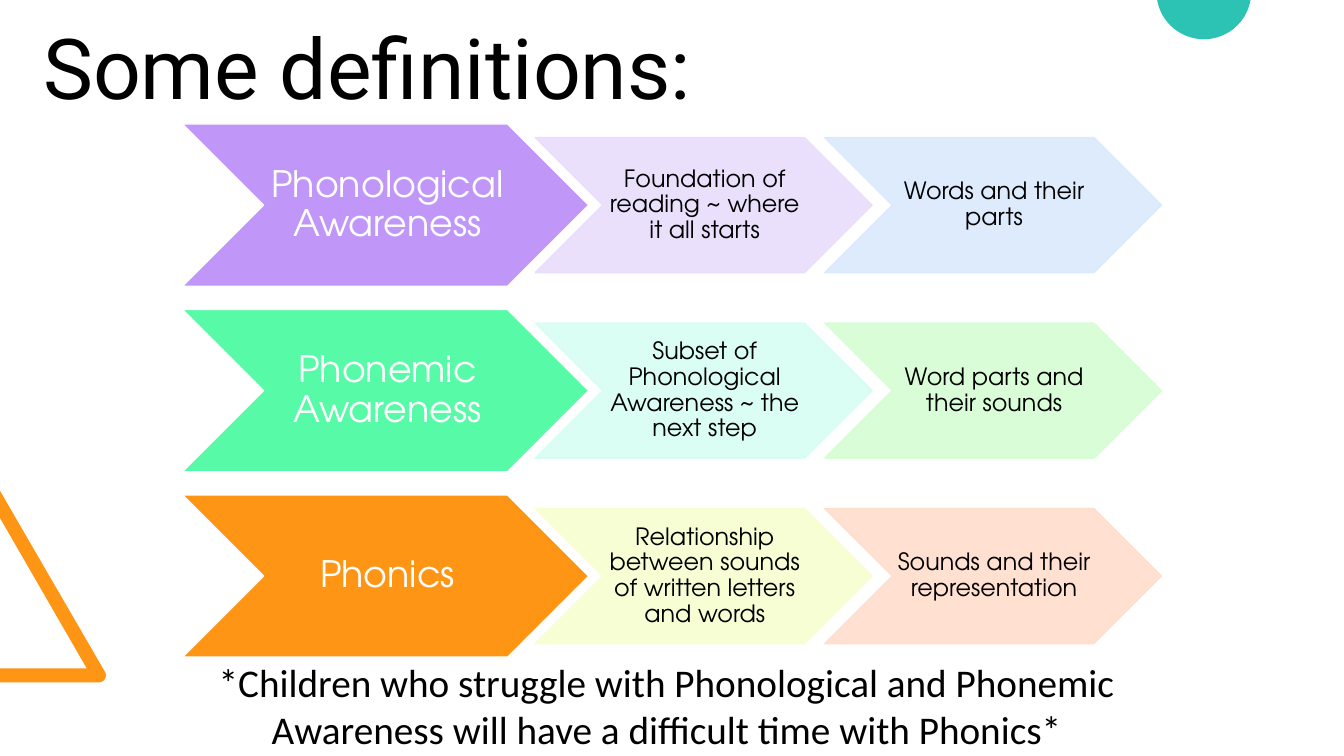
from dataclasses import dataclass
from math import cos, radians, sin

from lxml import etree
from pptx import Presentation
from pptx.dml.color import RGBColor
from pptx.enum.shapes import MSO_SHAPE
from pptx.enum.text import MSO_ANCHOR, PP_ALIGN
from pptx.oxml.ns import qn
from pptx.util import Inches, Pt

CHEVRON = MSO_SHAPE.CHEVRON
MIDDLE = MSO_ANCHOR.MIDDLE
LEFT, CENTER = PP_ALIGN.LEFT, PP_ALIGN.CENTER


@dataclass(frozen=True)
class Theme:
    black: str = "000000"
    white: str = "FFFFFF"
    orange: str = "FF9514"
    teal: str = "2CC3B4"
    title_font: str = "Roboto"
    note_font: str = "Calibri"
    step_font: str = "TeX Gyre Adventor"
    title_size: int = 60
    note_size: int = 28
    term_size: int = 26
    side_size: int = 17


THEME = Theme()

# Each row: the term, then its details, all as (text, fill).
ROWS = [
    [("Phonological Awareness", "C097F8"),
     ("Foundation of reading ~ where it all starts", "E8DDFC"),
     ("Words and their parts", "DAE9FD")],
    [("Phonemic Awareness", "57FAA6"),
     ("Subset of Phonological Awareness ~ the next step", "D6FDF3"),
     ("Word parts and their sounds", "D5FED3")],
    [("Phonics", THEME.orange),
     ("Relationship between sounds of written letters and words", "F8FECF"),
     ("Sounds and their representation", "FFDDCC")],
]
ROW_TOP, ROW_STEP = 1.23, 1.84
TERM_LEFT, TERM_W, TERM_H = 1.81, 4.03, 1.61
SIDE_LEFT, SIDE_STEP, SIDE_W, SIDE_H = 5.31, 2.87, 3.34, 1.34


def paint(fill, color, alpha=100):
    """Fill with a solid colour at the given percentage of opacity."""
    fill.solid()
    fill.fore_color.rgb = RGBColor.from_string(color)
    if alpha < 100:
        for tint in fill._xPr.iter(qn("a:srgbClr")):
            etree.SubElement(tint, qn("a:alpha"), val=str(alpha * 1000))


def write(frame, text, font, size, color, align):
    frame.word_wrap = True
    para = frame.paragraphs[0]
    para.text = text
    para.alignment = align
    para.font.name = font
    para.font.size = Pt(size)
    para.font.color.rgb = RGBColor.from_string(color)
    return para


def add_text(slide, box, text, font, size, align):
    shape = slide.shapes.add_textbox(*map(Inches, box))
    write(shape.text_frame, text, font, size, THEME.black, align)


def add_step(slide, box, text, size, ink, color, edge, alpha, inset):
    shape = slide.shapes.add_shape(CHEVRON, *map(Inches, box))
    shape.shadow.inherit = False
    paint(shape.fill, color, alpha)
    paint(shape.line.fill, edge, alpha)
    shape.line.width = Pt(1)
    frame = shape.text_frame
    frame.vertical_anchor = MIDDLE
    frame.margin_left = Inches(inset)
    frame.margin_right = 0
    frame.margin_top = frame.margin_bottom = Inches(inset / 2)
    para = write(frame, text, THEME.step_font, size, ink, CENTER)
    para.line_spacing = 0.9


def add_row(slide, top, row):
    (term, color), *sides = row
    add_step(slide, (TERM_LEFT, top, TERM_W, TERM_H), term,
             THEME.term_size, THEME.white, color, THEME.white, 100, 0.04)
    side_top = top + (TERM_H - SIDE_H) / 2
    for col, (text, color) in enumerate(sides):
        box = (SIDE_LEFT + col * SIDE_STEP, side_top, SIDE_W, SIDE_H)
        add_step(slide, box, text, THEME.side_size, THEME.black,
                 color, color, 90, 0.02)


def arc(x, y, radius, start, end, count=40):
    """Points on a circle, with angles in degrees clockwise from the right."""
    turns = [radians(start + (end - start) * i / count)
             for i in range(count + 1)]
    return [(x + radius * cos(t), y + radius * sin(t)) for t in turns]


def add_outline(slide, points, color):
    spots = [(Inches(x), Inches(y)) for x, y in points]
    path = slide.shapes.build_freeform(*spots[0])
    path.add_line_segments(spots[1:], close=True)
    shape = path.convert_to_shape()
    shape.shadow.inherit = False
    paint(shape.fill, color)
    shape.line.fill.background()


def main():
    deck = Presentation()
    deck.slide_width, deck.slide_height = Inches(13.33), Inches(7.5)
    slide = deck.slides.add_slide(deck.slide_layouts[6])

    corner = arc(0.98, 6.7, 0.07, -30, 90)
    add_outline(slide, [(0, 6.77), (0, 6.63), (0.86, 6.63),
                        (0, 5.14), (0, 4.87), *corner], THEME.orange)
    add_outline(slide, arc(11.94, -0.08, 0.47, 10, 170), THEME.teal)

    for i, row in enumerate(ROWS):
        add_row(slide, ROW_TOP + i * ROW_STEP, row)

    add_text(slide, (0.33, 0.1, 8.85, 1.11), "Some definitions:",
             THEME.title_font, THEME.title_size, LEFT)
    add_text(slide, (1.56, 6.48, 10.1, 1.35),
             "*Children who struggle with Phonological and Phonemic "
             "Awareness will have a difficult time with Phonics*",
             THEME.note_font, THEME.note_size, CENTER)
    deck.save("out.pptx")


if __name__ == "__main__":
    main()
